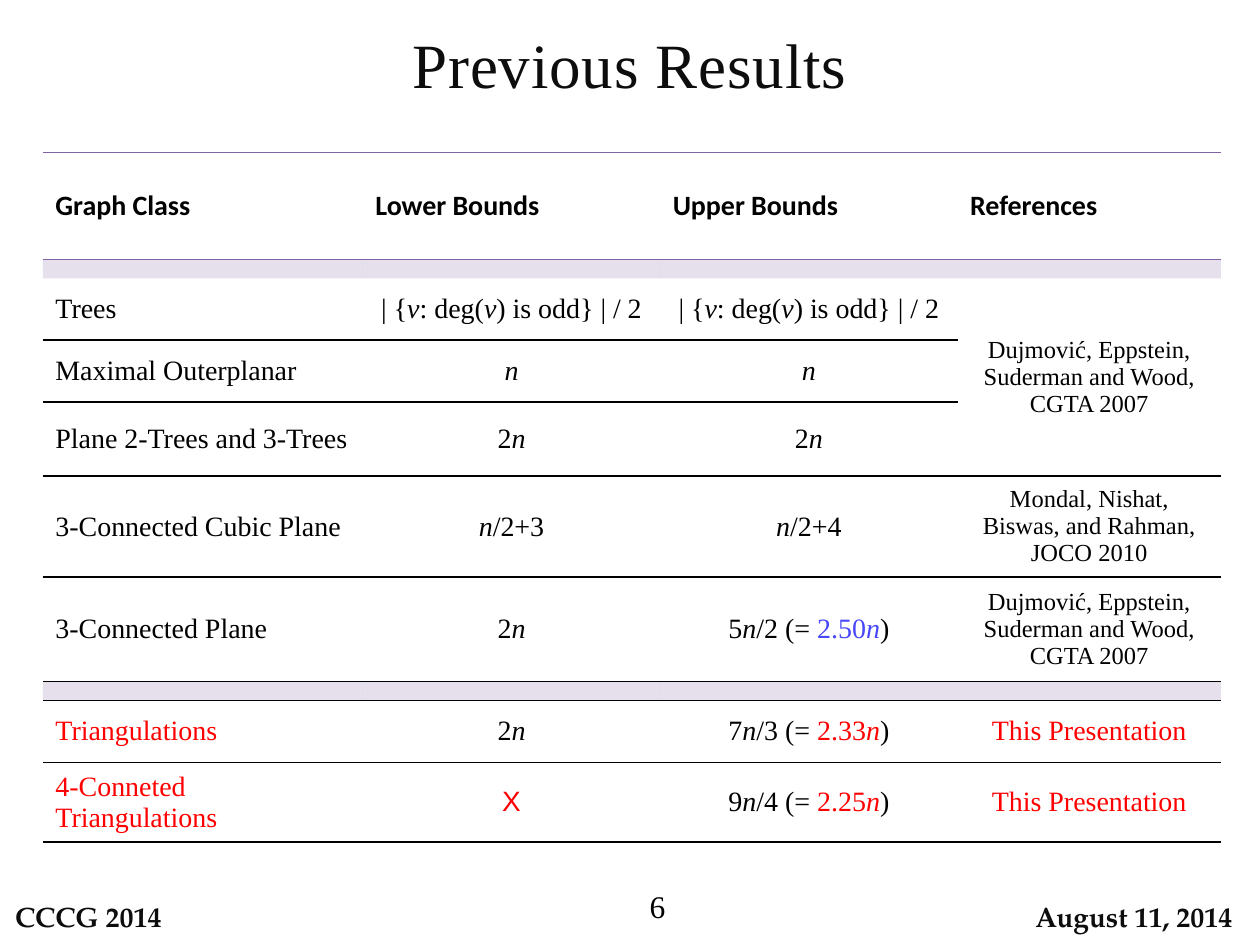
from dataclasses import dataclass
from typing import Optional

from lxml import etree
from pptx import Presentation
from pptx.dml.color import RGBColor
from pptx.enum.shapes import MSO_SHAPE
from pptx.enum.text import MSO_ANCHOR, PP_ALIGN
from pptx.oxml.ns import qn
from pptx.util import Inches, Pt

LEFT, MID, RIGHT = PP_ALIGN.LEFT, PP_ALIGN.CENTER, PP_ALIGN.RIGHT
TOP, CENTER = MSO_ANCHOR.TOP, MSO_ANCHOR.MIDDLE
ROUND = MSO_SHAPE.ROUNDED_RECTANGLE
PLAIN = "{2D5ABB26-0587-4C30-8999-92F81FD0307C}"
UNIT = 0.05


@dataclass(frozen=True)
class Theme:
    ink: str = "000000"
    soft: str = "0D0D0D"
    red: str = "FF0000"
    blue: str = "4747FB"
    violet: str = "8064A2"
    serif: str = "Times New Roman"
    head: str = "Calibri"
    sans: str = "Arial"
    foot: str = "TeX Gyre Pagella"
    title: int = 36
    page: int = 18
    body: int = 16
    cite: int = 14


T = Theme()


@dataclass(frozen=True)
class Run:
    text: str
    color: str = T.ink
    size: int = T.body
    font: str = T.serif
    bold: bool = False
    slant: bool = False
    track: int = 0


@dataclass(frozen=True)
class Label:
    run: Run
    box: tuple
    align: PP_ALIGN
    anchor: MSO_ANCHOR = CENTER
    round: bool = False


@dataclass(frozen=True)
class Row:
    high: float
    cells: Optional[list] = None
    line: Optional[str] = T.ink
    align: PP_ALIGN = MID


def grid(count: float) -> int:
    return Inches(count * UNIT)


def var(name: str, color: str = T.ink) -> Run:
    return Run(name, color, slant=True)


def ratio(top: str, base: str, value: str, color: str) -> list:
    return [Run(top), var("n"), Run(f"/{base} (= "), Run(value, color),
            var("n", color), Run(")")]


def write(frame, runs: list, align: PP_ALIGN) -> None:
    para = frame.paragraphs[0]
    para.alignment = align
    for item in runs:
        run = para.add_run()
        run.text = item.text
        font = run.font
        font.name, font.size = item.font, Pt(item.size)
        font.bold, font.italic = item.bold, item.slant
        font.color.rgb = RGBColor.from_string(item.color)
        if item.track:
            run._r.get_or_add_rPr().set("spc", str(item.track))


def place(slide, label: Label) -> None:
    box = [grid(part) for part in label.box]
    if label.round:
        shape = slide.shapes.add_shape(ROUND, *box)
        shape.shadow.inherit = False
        shape.fill.background()
        shape.line.fill.background()
    else:
        shape = slide.shapes.add_textbox(*box)
    frame = shape.text_frame
    frame.word_wrap = True
    frame.vertical_anchor = label.anchor
    write(frame, [label.run], label.align)


def rule(cell, side: str, color: str) -> None:
    line = etree.SubElement(cell._tc.get_or_add_tcPr(), qn(f"a:{side}"), w=str(Pt(1)))
    fill = etree.SubElement(line, qn("a:solidFill"))
    etree.SubElement(fill, qn("a:srgbClr"), val=color)


def shade(cell) -> None:
    cell.fill.solid()
    cell.fill.fore_color.rgb = RGBColor.from_string(T.violet)
    fill = cell._tc.tcPr.find(qn("a:solidFill"))
    etree.SubElement(fill[0], qn("a:alpha"), val="20000")
    cell.margin_top = cell.margin_bottom = 0
    para = cell.text_frame.paragraphs[0]._p
    etree.SubElement(para, qn("a:endParaRPr"), sz="400")


def draw(slide, left: float, top: float, cols: list, rows: list) -> None:
    high = sum(row.high for row in rows)
    frame = slide.shapes.add_table(len(rows), len(cols), grid(left), grid(top),
                                   grid(sum(cols)), grid(high))
    table = frame.table
    table.first_row = table.horz_banding = False
    table._tbl.tblPr.find(qn("a:tableStyleId")).text = PLAIN
    for col, wide in zip(table.columns, cols):
        col.width = grid(wide)
    table.cell(2, 3).merge(table.cell(4, 3))
    for i, row in enumerate(rows):
        table.rows[i].height = grid(row.high)
        for j in range(len(cols)):
            cell = table.cell(i, j)
            cell.vertical_anchor = CENTER
            if i == 0:
                rule(cell, "lnT", T.violet)
            inner = cell.is_spanned and i < 4
            if row.line and not inner:
                rule(cell, "lnB", row.line)
            if row.cells is None:
                shade(cell)
                continue
            cell.fill.background()
            if j < len(row.cells):
                write(cell.text_frame, row.cells[j], row.align if j else LEFT)


HEADS = ["Graph Class", "Lower Bounds", "Upper Bounds", "References"]
ODD = [Run("| {"), var("v"), Run(": deg("), var("v"), Run(") is odd} | / 2")]
ONE = [var("n")]
TWO = [Run("2"), var("n")]
DUJ = [Run("Dujmović, Eppstein, Suderman and Wood, CGTA 2007", size=T.cite)]
MON = [Run("Mondal, Nishat, Biswas, and Rahman, JOCO 2010", size=T.cite)]
OURS = [Run("This Presentation", T.red)]

COLS = [50.8, 47.2, 47.2, 41.8]
ROWS = [
    Row(17, [[Run(head, font=T.head, bold=True)] for head in HEADS], T.violet, LEFT),
    Row(3, line=None),
    Row(9.8, [[Run("Trees")], ODD, ODD, DUJ]),
    Row(9.8, [[Run("Maximal Outerplanar")], ONE, ONE]),
    Row(11.8, [[Run("Plane 2-Trees and 3-Trees")], TWO, TWO]),
    Row(16, [[Run("3-Connected Cubic Plane")], [var("n"), Run("/2+3")],
             [var("n"), Run("/2+4")], MON]),
    Row(16.6, [[Run("3-Connected Plane")], TWO, ratio("5", "2", "2.50", T.blue), DUJ]),
    Row(3),
    Row(9.8, [[Run("Triangulations", T.red)], TWO,
              ratio("7", "3", "2.33", T.red), OURS]),
    Row(12.6, [[Run("4-Conneted Triangulations", T.red)],
               [Run("X", T.red, font=T.sans)],
               ratio("9", "4", "2.25", T.red), OURS]),
]
LABELS = [
    Label(Run("Previous Results", T.soft, T.title, track=50), (0, 3, 200, 14.2), MID, TOP),
    Label(Run("CCCG 2014", T.soft, font=T.foot, bold=True),
          (0, 141, 30.8, 9), LEFT, round=True),
    Label(Run("August 11, 2014", T.soft, font=T.foot, bold=True),
          (160, 141, 40, 9), MID, round=True),
    Label(Run("6", size=T.page), (61, 139.8, 46.6, 8), RIGHT),
]


def main() -> None:
    deck = Presentation()
    deck.slide_width, deck.slide_height = grid(200), grid(150)
    slide = deck.slides.add_slide(deck.slide_layouts[6])
    for label in LABELS:
        place(slide, label)
    draw(slide, 6.8, 24.2, COLS, ROWS)
    deck.save("out.pptx")


if __name__ == "__main__":
    main()
